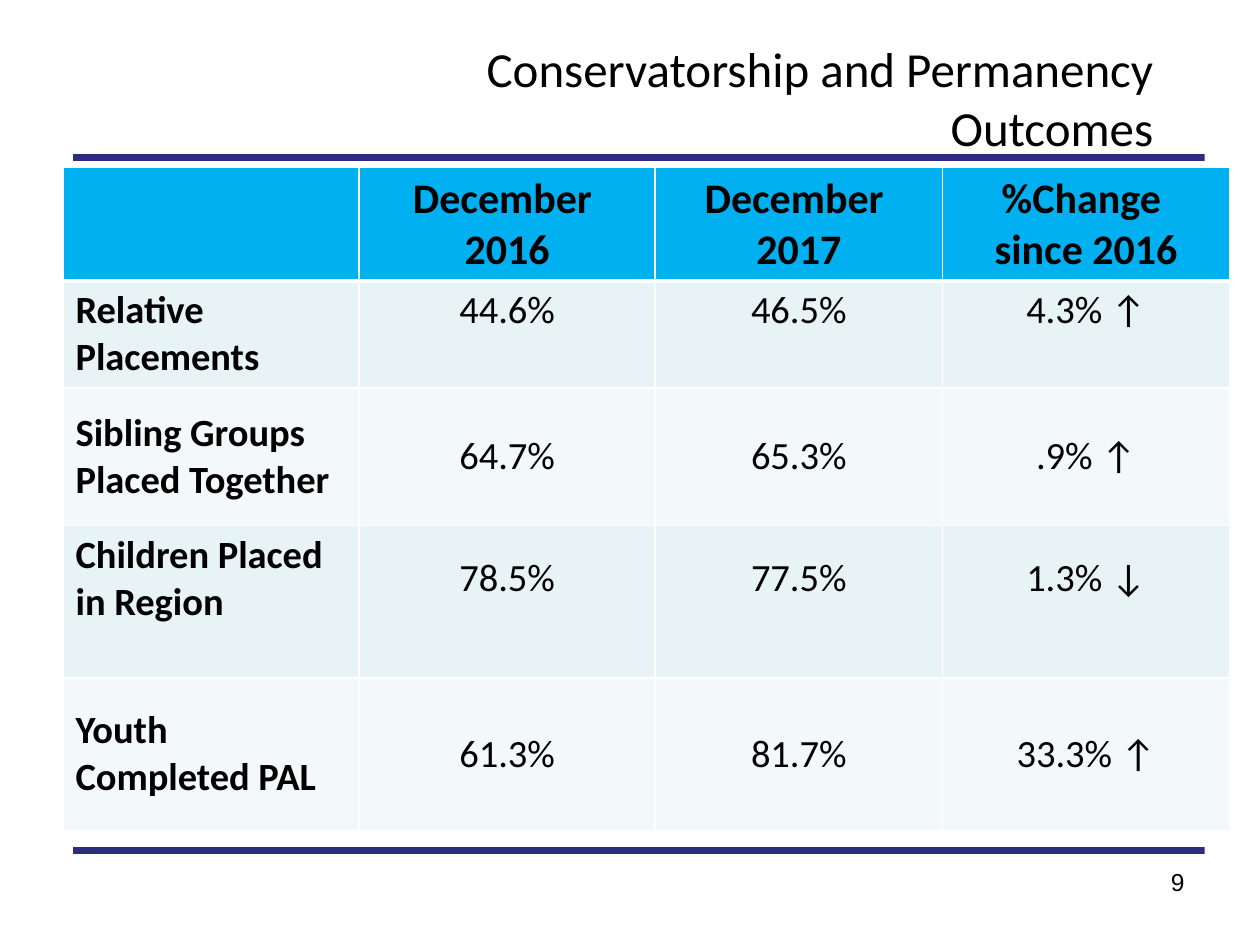
from lxml import etree
from pptx import Presentation, util as u
from pptx.dml.color import RGBColor
from pptx.enum import shapes, text
from pptx.oxml.ns import qn

# Content
TITLE = "Conservatorship and Permanency Outcomes"
PAGE = "9"
HEADER = ["", "December \n2016", "December \n2017", "%Change \nsince 2016"]
ROWS = [
    ["Relative Placements", "44.6%", "46.5%", "4.3% ↑"],
    ["Sibling Groups Placed Together", "64.7%", "65.3%", ".9% ↑"],
    ["Children Placed in Region", "78.5%", "77.5%", "1.3% ↓"],
    ["Youth Completed PAL", "61.3%", "81.7%", "33.3% ↑"],
]

# Theme
THEME = dict(
    ink="000000", rule="000066", border="FFFFFF", header="00B0F0",
    bands=("E7F3F4", "F3F9FA"), rule_width=4, rule_alpha=82,
    title=dict(name="Calibri", size=u.Pt(28), bold=False),
    head=dict(name="Calibri", size=u.Pt(24), bold=True),
    label=dict(name="Calibri", size=u.Pt(22), bold=True),
    value=dict(name="Calibri", size=u.Pt(22), bold=False),
    page=dict(name="Arial", size=u.Pt(14), bold=False),
)

# Layout, in inches
RULES = dict(left=0.58, right=9.56, tops=(1.25, 6.75))
TITLE_BOX = (2.5, 0.3, 6.75, 0.95)
PAGE_BOX = (7.17, 6.83, 2.33, 0.52)
TABLE_AT = (0.5, 1.33)
COLS = [2.35, 2.35, 2.28, 2.28]
HEIGHTS = [0.9, 0.85, 1.09, 1.21, 1.21]
TOP_ROWS = (0, 1)            # rows whose text starts at the top
BOTTOM_INSET = {3: 0.42}     # raises the text of one row

RIGHT, CENTER, LEFT = (text.PP_ALIGN.RIGHT, text.PP_ALIGN.CENTER,
                       text.PP_ALIGN.LEFT)
MIDDLE, TOP = text.MSO_ANCHOR.MIDDLE, text.MSO_ANCHOR.TOP


def rgb(name):
    return RGBColor.from_string(name)


def write(tf, content, style, align):
    """Fill a text frame, one paragraph a line."""
    tf.word_wrap = True
    tf.text = content
    for p in tf.paragraphs:
        p.alignment = align
        for font in [p.font] + [r.font for r in p.runs]:
            for key, val in THEME[style].items():
                setattr(font, key, val)
            font.color.rgb = rgb(THEME["ink"])


def add_text(s, box, content, style, anchor):
    tf = s.shapes.add_textbox(*map(u.Inches, box)).text_frame
    write(tf, content, style, RIGHT)
    tf.vertical_anchor = anchor


def add_rule(s, top):
    sp = s.shapes.add_connector(
        shapes.MSO_CONNECTOR.STRAIGHT, u.Inches(RULES["left"]), u.Inches(top),
        u.Inches(RULES["right"]), u.Inches(top))
    sp.line.width = u.Pt(THEME["rule_width"])
    sp.line.color.rgb = rgb(THEME["rule"])
    pr = sp._element.spPr
    color = pr.find(".//" + qn("a:srgbClr"))
    etree.SubElement(color, qn("a:alpha"), val=str(THEME["rule_alpha"] * 1000))
    etree.SubElement(pr, qn("a:effectLst"))


def set_borders(cell, widths):
    """Draw left, right, top and bottom borders, ahead of the cell fill."""
    pr = cell._tc.get_or_add_tcPr()
    for i, (side, width) in enumerate(zip("LRTB", widths)):
        ln = etree.Element(qn("a:ln" + side), w=str(u.Pt(width)))
        fill = etree.SubElement(ln, qn("a:solidFill"))
        etree.SubElement(fill, qn("a:srgbClr"), val=THEME["border"])
        pr.insert(i, ln)


def add_outcomes(s):
    size = (sum(COLS), sum(HEIGHTS))
    table = s.shapes.add_table(len(HEIGHTS), len(COLS),
                               *map(u.Inches, TABLE_AT + size)).table
    for col, width in zip(table.columns, COLS):
        col.width = u.Inches(width)
    for row, height in zip(table.rows, HEIGHTS):
        row.height = u.Inches(height)

    for i, row in enumerate([HEADER] + ROWS):
        for j, content in enumerate(row):
            cell = table.cell(i, j)
            style = "head" if i == 0 else "value" if j else "label"
            align = LEFT if style == "label" else CENTER
            write(cell.text_frame, content, style, align)
            cell.vertical_anchor = TOP if i in TOP_ROWS else MIDDLE
            cell.margin_bottom = u.Inches(BOTTOM_INSET.get(i, 0.05))
            cell.fill.solid()
            cell.fill.fore_color.rgb = rgb(
                THEME["bands"][(i - 1) % 2] if i else THEME["header"])
            set_borders(cell, (1, 1, 3 if i == 1 else 1, 3 if i == 0 else 1))


def main():
    prs = Presentation()
    prs.slide_width, prs.slide_height = u.Inches(10), u.Inches(7.5)
    s = prs.slides.add_slide(prs.slide_layouts[6])
    for top in RULES["tops"]:
        add_rule(s, top)
    add_text(s, TITLE_BOX, TITLE, "title", MIDDLE)
    add_text(s, PAGE_BOX, PAGE, "page", TOP)
    add_outcomes(s)
    prs.save("out.pptx")


if __name__ == "__main__":
    main()
